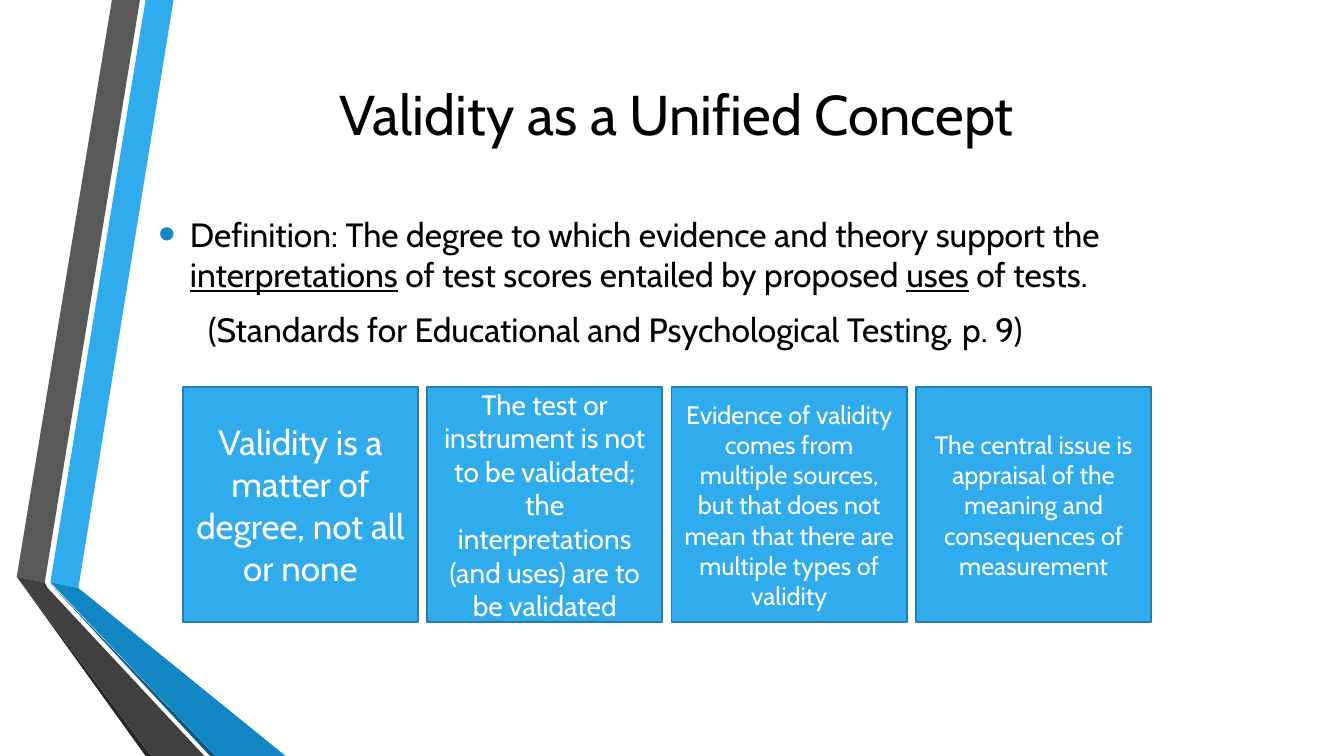
from pptx import Presentation
from pptx.dml.color import RGBColor
from pptx.enum.shapes import MSO_SHAPE as Shape
from pptx.enum.text import MSO_ANCHOR as Anchor, MSO_AUTO_SIZE as AutoSize, PP_ALIGN as Align
from pptx.oxml import parse_xml
from pptx.oxml.ns import nsdecls
from pptx.util import Pt


def paint(color_format, hex_color):
    color_format.rgb = RGBColor.from_string(hex_color)


def write(paragraph, text, hex_color, **font_values):
    run = paragraph.add_run()
    run.text = text
    for name, value in {"name": "Cabin", **font_values}.items():
        setattr(run.font, name, value)
    paint(run.font.color, hex_color)


deck = Presentation()
deck.slide_width, deck.slide_height = Pt(960), Pt(540)
slide = deck.slides.add_slide(deck.slide_layouts[1])
title, definition = slide.placeholders

# Folded ribbons on the left, points in order around each outline
ribbons = [
    ("30ACEC", [(36, 416), (55.5, 420), (124.5, 0), (104.5, 0)]),
    ("595959", [(100, 0), (80, 0), (11.5, 412.5), (31.5, 415.5)]),
    ("262626", [(11.5, 412.5), (104.5, 540), (108.5, 540)]),
    ("0C5A82", [(36, 417), (150, 540), (154, 540)]),
    ("1287C3", [(36, 416.5), (154, 540), (204, 540), (55.5, 420)]),
    ("404040", [(145.5, 540), (34.5, 420), (31.5, 415.5), (11.5, 412.5), (108.5, 540)]),
]
for color, corners in ribbons:
    outline = slide.shapes.build_freeform(*corners[0], scale=Pt(1))
    outline.add_line_segments(corners[1:], close=True)
    ribbon = outline.convert_to_shape()
    ribbon.shadow.inherit = False
    ribbon.fill.solid()
    paint(ribbon.fill.fore_color, color)
    ribbon.line.fill.background()

# Title and definition placeholders
areas = [
    (title, Anchor.MIDDLE, {"left": 66, "top": 29, "width": 834.5, "height": 103.5}),
    (definition, Anchor.TOP, {"left": 106, "top": 149, "width": 834.5, "height": 110}),
]
for area, anchor, box in areas:
    for name, value in box.items():
        setattr(area, name, Pt(value))
    area.text_frame.auto_size = AutoSize.NONE
    area.text_frame.vertical_anchor = anchor

heading = title.text_frame.paragraphs[0]
heading.alignment = Align.CENTER
write(heading, "Validity as a Unified Concept", "000000", size=Pt(40))

# Definition with its underlined key words, then the source
statement = definition.text_frame.paragraphs[0]
citation = definition.text_frame.add_paragraph()
passages = [
    (statement, "Definition: The degree to which evidence and theory support the ", {}),
    (statement, "interpretations", {"underline": True}),
    (statement, " of test scores entailed by proposed ", {}),
    (statement, "uses", {"underline": True}),
    (statement, " of tests.", {}),
    (citation, "(Standards for Educational and Psychological Testing", {}),
    (citation, ", ", {"italic": True}),
    (citation, "p. 9)", {}),
]
for paragraph, text, emphasis in passages:
    write(paragraph, text, "000000", size=Pt(24), **emphasis)

bullet = [
    '<a:buClr {}><a:srgbClr val="1287C3"/></a:buClr>',
    '<a:buSzPct {} val="145000"/>',
    '<a:buFont {} typeface="Arial"/>',
    '<a:buChar {} char="•"/>',
]
layouts = [
    (statement, 0, 22.5, -22.5, bullet),
    (citation, 4.8, 35.5, 0, ["<a:buNone {}/>"]),
]
for paragraph, before, margin, indent, marks in layouts:
    paragraph.space_before, paragraph.space_after = Pt(before), Pt(6)
    properties = paragraph._p.get_or_add_pPr()
    properties.set("marL", str(Pt(margin)))
    properties.set("indent", str(Pt(indent)))
    for mark in marks:
        properties.append(parse_xml(mark.format(nsdecls("a"))))

# Row of four key points
key_points = [
    (25, "Validity is a matter of degree, not all or none"),
    (20, "The test or instrument is not to be validated; the interpretations (and uses) "
         "are to be validated"),
    (18, "Evidence of validity comes from multiple sources, but that does not mean that "
         "there are multiple types of validity"),
    (18, "The central issue is appraisal of the meaning and consequences of measurement"),
]
side, pitch = 168, 174.6
for column, (size, point) in enumerate(key_points):
    card = slide.shapes.add_shape(
        Shape.RECTANGLE, Pt(130.5 + column * pitch), Pt(276.5), Pt(side), Pt(side))
    card.shadow.inherit = False
    card.fill.solid()
    paint(card.fill.fore_color, "30ACEC")
    paint(card.line.color, "247FAF")
    card.line.width = Pt(1.25)
    card.text_frame.word_wrap = True
    card.text_frame.vertical_anchor = Anchor.MIDDLE
    paragraph = card.text_frame.paragraphs[0]
    paragraph.alignment = Align.CENTER
    write(paragraph, point, "FFFFFF", size=Pt(size))

deck.save("out.pptx")
